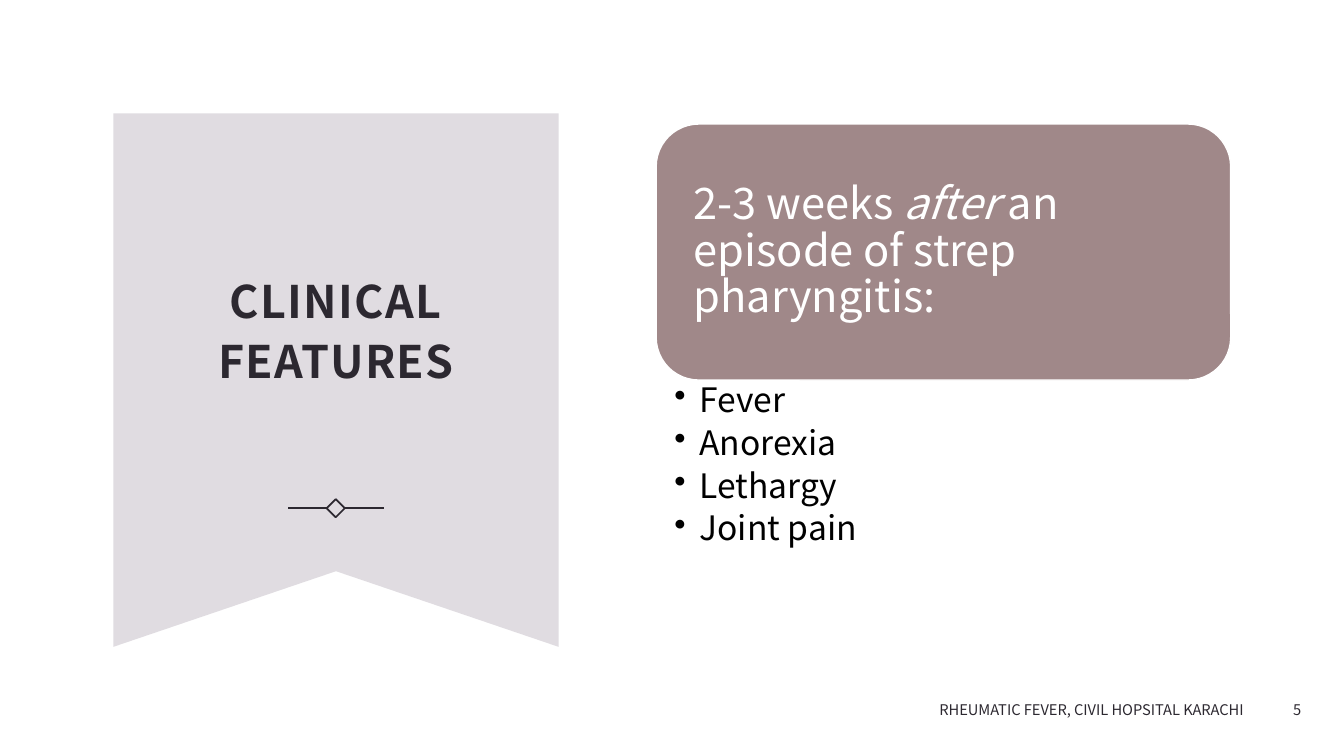
from lxml.etree import SubElement
from pptx import Presentation
from pptx.dml.color import RGBColor
from pptx.enum.shapes import MSO_CONNECTOR, MSO_SHAPE
from pptx.enum.text import MSO_ANCHOR, PP_ALIGN
from pptx.oxml.ns import qn
from pptx.util import Pt

WHITE = RGBColor(0xFF, 0xFF, 0xFF)
BLACK = RGBColor(0x00, 0x00, 0x00)
INK = RGBColor(0x2C, 0x28, 0x30)
LILAC = RGBColor(0xE0, 0xDC, 0xE1)
MAUVE = RGBColor(0xA0, 0x88, 0x89)

CENTER, RIGHT, LEFT = PP_ALIGN.CENTER, PP_ALIGN.RIGHT, PP_ALIGN.LEFT
MIDDLE, TOP = MSO_ANCHOR.MIDDLE, MSO_ANCHOR.TOP


def set_all(obj, values):
    for name, value in values.items():
        setattr(obj, name, value)


class Deck:
    font = "Noto Sans CJK KR"
    line_width = Pt(1.25)

    def __init__(self, width, height):
        self.prs = Presentation()
        set_all(self.prs, {"slide_width": Pt(width), "slide_height": Pt(height)})
        self.s = self.prs.slides.add_slide(self.prs.slide_layouts[6])
        self.paint(self.s.background.fill, WHITE)

    def paint(self, fill, color):
        if color is None:
            fill.background()
        else:
            fill.solid()
            fill.fore_color.rgb = color

    def style(self, sp, fill, line, width):
        sp.shadow.inherit = False
        self.paint(sp.fill, fill)
        self.paint(sp.line.fill, line)
        if line is not None:
            sp.line.width = width
        return sp

    def outline(self, points, fill):
        fb = self.s.shapes.build_freeform(*points[0], scale=Pt(1))
        fb.add_line_segments(points[1:], close=True)
        return self.style(fb.convert_to_shape(), fill, None, None)

    def shape(self, kind, box, fill, line, width=line_width):
        sp = self.s.shapes.add_shape(kind, *map(Pt, box))
        return self.style(sp, fill, line, width)

    def connector(self, start, end, color, sp, site):
        c = self.s.shapes.add_connector(
            MSO_CONNECTOR.STRAIGHT, *map(Pt, start + end))
        c.begin_connect(sp, site)
        c.line.color.rgb = color
        c.line.width = self.line_width
        SubElement(c._element.spPr, qn("a:effectLst"))

    def text_box(self, box):
        return self.s.shapes.add_textbox(*map(Pt, box))

    def add_text(self, sp, paragraphs, size, color, insets, anchor=MIDDLE,
                 bold=False, tracking=0, bullet=None, **layout):
        tf = sp.text_frame
        sides = ("margin_left", "margin_top", "margin_right", "margin_bottom")
        set_all(tf, {"word_wrap": True, "vertical_anchor": anchor,
                     **dict(zip(sides, map(Pt, insets)))})
        for i, runs in enumerate(paragraphs):
            p = tf.add_paragraph() if i else tf.paragraphs[0]
            set_all(p, layout)
            if bullet:
                pPr = p._p.get_or_add_pPr()
                pPr.set("marL", str(Pt(18)))
                pPr.set("indent", str(-Pt(18)))
                SubElement(pPr, qn("a:buChar")).set("char", bullet)
            for text, italic in runs:
                r = p.add_run()
                r.text = text
                set_all(r.font, {"name": self.font, "size": Pt(size),
                                 "bold": bold, "italic": italic})
                r.font.color.rgb = color
                rPr = r._r.get_or_add_rPr()
                SubElement(rPr, qn("a:ea")).set("typeface", self.font)
                if tracking:
                    rPr.set("spc", str(tracking))


def main():
    d = Deck(960, 540)
    pad = (8.6, 8.6, 8.6, 7.2)

    left, top, right, bottom, notch = 80.6, 80.6, 398.9, 462.2, 408.2
    mid = (left + right) / 2
    d.outline([(left, top), (right, top), (right, bottom),
               (mid, notch), (left, bottom)], LILAC)
    d.add_text(d.text_box((112.3, 130.3, 255.6, 205.2)),
               [[("CLINICAL FEATURES", False)]], 32, INK, pad, bold=True,
               tracking=90, alignment=CENTER, line_spacing=1.13)

    half, reach, y = 6.5, 34.2, 363
    diamond = d.shape(MSO_SHAPE.DIAMOND,
                      (mid - half, y - half, 2 * half, 2 * half), None, INK)
    for side, site in ((-1, 1), (1, 3)):
        d.connector((mid + side * half, y), (mid + side * reach, y),
                    INK, diamond, site)

    card = d.shape(MSO_SHAPE.ROUNDED_RECTANGLE, (468.7, 88.6, 410.4, 182.9),
                   MAUVE, WHITE, Pt(1))
    d.add_text(card, [[("2-3 weeks ", False), ("after", True),
                       (" an episode of strep pharyngitis:", False)]],
               31, WHITE, (18, 18, 18, 18), alignment=LEFT, line_spacing=0.9,
               space_after=Pt(10.8))

    symptoms = ["Fever", "Anorexia", "Lethargy", "Joint pain"]
    d.add_text(d.text_box((468.7, 270.7, 410.4, 182.2)),
               [[(name, False)] for name in symptoms], 24, BLACK,
               (13, 2.9, 17.3, 2.9), anchor=TOP, bullet="•", alignment=LEFT,
               line_spacing=0.9, space_after=Pt(4.8))

    footer = [("RHEUMATIC FEVER, CIVIL HOPSITAL KARACHI", 573.1, 324),
              ("5", 897.1, 41)]
    for text, x, width in footer:
        d.add_text(d.text_box((x, 491.8, width, 28.8)), [[(text, False)]],
                   10.5, INK, pad, alignment=RIGHT)

    d.prs.save("out.pptx")


if __name__ == "__main__":
    main()
